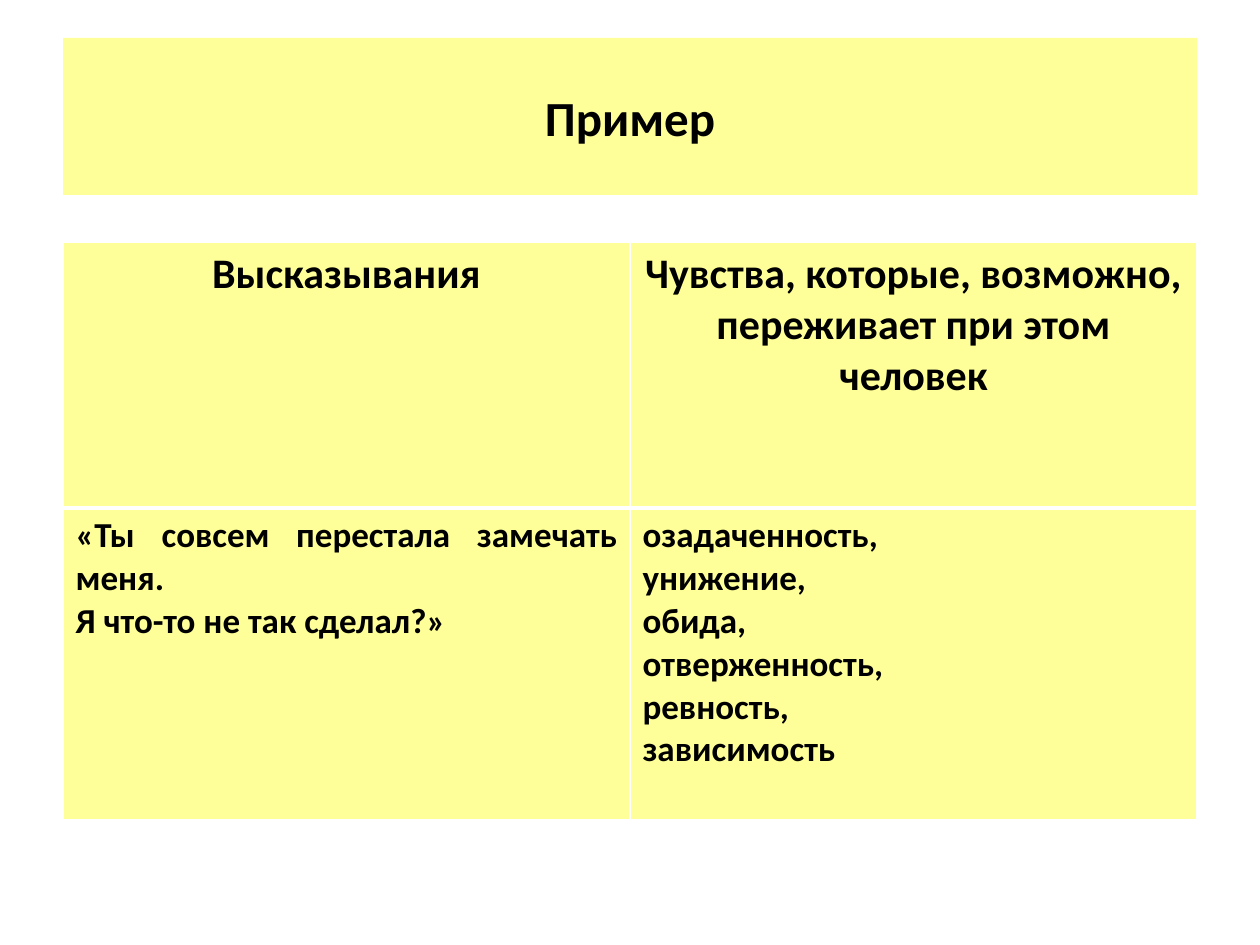
from lxml.etree import SubElement
from pptx import Presentation
from pptx.dml.color import RGBColor
from pptx.enum.text import MSO_ANCHOR, PP_ALIGN
from pptx.oxml.ns import qn
from pptx.util import Pt

PX = 914400 // 126
COLORS = {"panel": "FFFF99", "text": "000000", "border": "FFFFFF"}
HEADERS = ["Высказывания", "Чувства, которые, возможно, переживает при этом человек"]
STATEMENTS = ["«Ты совсем перестала замечать меня.", "Я что-то не так сделал?»"]
FEELINGS = ["озадаченность,", "унижение,", "обида,", "отверженность,", "ревность,", "зависимость"]


class SlideBuilder:
    font = "Calibri"

    def __init__(self, slide):
        self.slide = slide

    def color(self, name):
        return RGBColor.from_string(COLORS[name])

    def fill(self, target):
        target.fill.solid()
        target.fill.fore_color.rgb = self.color("panel")

    def add_lines(self, frame, lines, size, align):
        for index, line in enumerate(lines):
            paragraph = frame.add_paragraph() if index else frame.paragraphs[0]
            paragraph.alignment = align
            run = paragraph.add_run()
            run.text = line
            run.font.name = self.font
            run.font.size = Pt(size)
            run.font.bold = True
            run.font.color.rgb = self.color("text")

    def title(self, text, left, top, width, height):
        title = self.slide.shapes.title
        title.left, title.top = left * PX, top * PX
        title.width, title.height = width * PX, height * PX
        self.fill(title)
        title.text_frame.vertical_anchor = MSO_ANCHOR.MIDDLE
        self.add_lines(title.text_frame, [text], 28, PP_ALIGN.CENTER)

    def borders(self, cell, top, bottom):
        """Add side lines of 1 pt and the given top and bottom widths, in points."""
        properties = cell._tc.get_or_add_tcPr()
        for side, width in {"L": 1, "R": 1, "T": top, "B": bottom}.items():
            line = SubElement(properties, qn(f"a:ln{side}"), w=str(Pt(width)))
            solid = SubElement(line, qn("a:solidFill"))
            SubElement(solid, qn("a:srgbClr"), val=COLORS["border"])

    def table(self, rows, left, top, width, row_heights):
        """Build a table whose first row is the header; each cell is a list of lines."""
        columns = len(rows[0])
        frame = self.slide.shapes.add_table(
            len(rows), columns, left * PX, top * PX, width * PX, sum(row_heights) * PX)
        table = frame.table
        for column in table.columns:
            column.width = width * PX // columns
        for row_index, (row, height) in enumerate(zip(rows, row_heights)):
            table.rows[row_index].height = height * PX
            header = row_index == 0
            size, align = (24, PP_ALIGN.CENTER) if header else (20, PP_ALIGN.JUSTIFY)
            top_line, bottom_line = (1, 3) if header else (3, 1)
            for column_index, lines in enumerate(row):
                cell = table.cell(row_index, column_index)
                self.borders(cell, top_line, bottom_line)
                self.fill(cell)
                self.add_lines(cell.text_frame, lines, size, align)


def main():
    presentation = Presentation()
    presentation.slide_width = 1260 * PX
    presentation.slide_height = 945 * PX
    title_only = presentation.slide_layouts[5]
    builder = SlideBuilder(presentation.slides.add_slide(title_only))
    builder.title("Пример", 63, 38, 1134, 157)
    builder.table([[[header] for header in HEADERS], [STATEMENTS, FEELINGS]],
                  63, 242, 1134, [266, 312])
    presentation.save("out.pptx")


if __name__ == "__main__":
    main()
